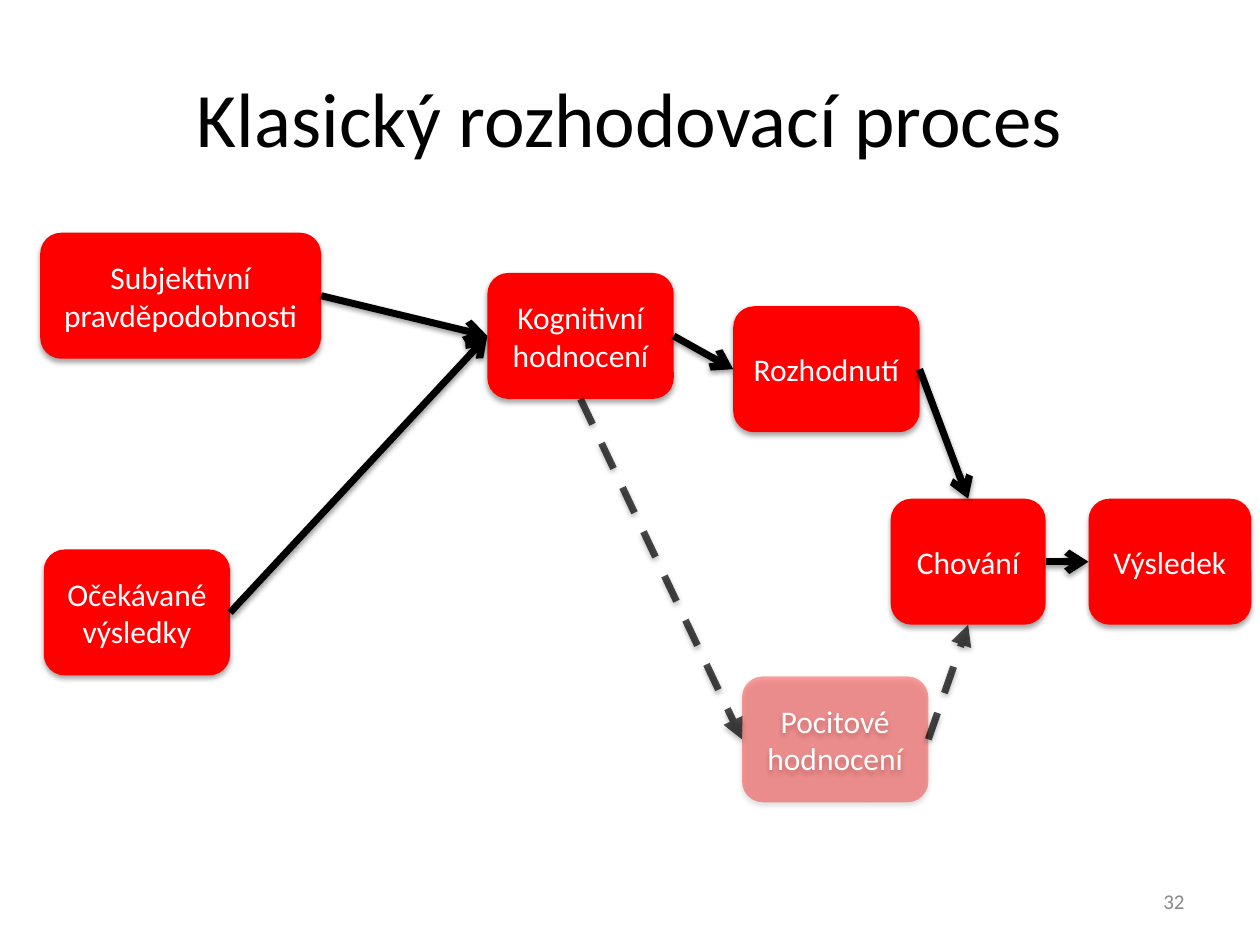
from lxml import etree
from pptx import Presentation
from pptx import util as u
from pptx.dml import color
from pptx.enum import dml, shapes, text
from pptx.oxml import ns


TOP, LEFT, BOTTOM, RIGHT = range(4)


def rgb(value):
    return color.RGBColor.from_string(value)


def add_node(parent, tag, **attributes):
    node = etree.SubElement(parent, ns.qn(tag))
    for name, value in attributes.items():
        node.set(name, str(value))
    return node


def set_alpha(fill_parent, percent):
    tone = fill_parent.find(ns.qn("a:solidFill"))[0]
    add_node(tone, "a:alpha", val=percent * 1000)


class Slide:
    font = "Calibri"
    black, white, red, grey = "000000", "FFFFFF", "FF0000", "898989"
    box_height = 72

    def __init__(self, deck):
        self.page = deck.slides.add_slide(deck.slide_layouts[6])

    def set_words(self, shape, words, size, tone, align):
        frame = shape.text_frame
        frame.word_wrap = True
        frame.vertical_anchor = text.MSO_ANCHOR.MIDDLE
        frame.text = words
        para = frame.paragraphs[0]
        para.alignment = align
        span = para.runs[0]
        span.font.name = self.font
        span.font.size = u.Pt(size)
        span.font.color.rgb = rgb(tone)

    def label(self, words, left, top, width, height, size, tone, align):
        box = self.page.shapes.add_textbox(*map(u.Pt, (left, top, width, height)))
        self.set_words(box, words, size, tone, align)

    def shade(self, properties, alpha, distance):
        effects = properties.find(ns.qn("a:effectLst"))
        if effects is None:
            effects = add_node(properties, "a:effectLst")
        shadow = add_node(effects, "a:outerShdw", blurRad=u.Pt(3.1), dist=u.Pt(distance),
                          dir=90 * 60000, rotWithShape=0)
        tone = add_node(shadow, "a:srgbClr", val=self.black)
        add_node(tone, "a:alpha", val=alpha * 1000)

    def step(self, words, left, top, width=106.5, opacity=100):
        box = self.page.shapes.add_shape(
            shapes.MSO_SHAPE.ROUNDED_RECTANGLE,
            *map(u.Pt, (left, top, width, self.box_height)))
        box.fill.solid()
        box.fill.fore_color.rgb = rgb(self.red)
        box.line.fill.background()
        box.shadow.inherit = False
        properties = box.element.spPr
        if opacity < 100:
            set_alpha(properties, opacity)
        self.shade(properties, 35, 1.8)
        self.set_words(box, words, 18, self.white, text.PP_ALIGN.CENTER)
        return box

    def arrow(self, start, start_side, end, end_side, dashed=False):
        link = self.page.shapes.add_connector(shapes.MSO_CONNECTOR.STRAIGHT, 0, 0, 0, 0)
        link.begin_connect(start, start_side)
        link.end_connect(end, end_side)
        link.line.width = u.Pt(4)
        link.line.color.rgb = rgb(self.black)
        properties = link.element.spPr
        stroke = properties.find(ns.qn("a:ln"))
        if dashed:
            link.line.dash_style = dml.MSO_LINE.DASH
            set_alpha(stroke, 69)
        add_node(stroke, "a:tailEnd", type="triangle" if dashed else "arrow")
        self.shade(properties, 38, 1.6)


deck = Presentation()
deck.slide_width, deck.slide_height = u.Pt(720), u.Pt(540)
slide = Slide(deck)

slide.label("Klasický rozhodovací proces", 36, 21.6, 648, 90, 44,
            slide.black, text.PP_ALIGN.CENTER)
slide.label("32", 516, 500.5, 168, 28.75, 12, slide.grey, text.PP_ALIGN.RIGHT)

decision = slide.step("Rozhodnutí", 419, 175)
result = slide.step("Výsledek", 622, 285, 93)
behaviour = slide.step("Chování", 509, 285, 88.5)
cognition = slide.step("Kognitivní hodnocení", 278.5, 156)
expectation = slide.step("Očekávané výsledky", 25, 314)
probability = slide.step("Subjektivní pravděpodobnosti", 23, 133, 160.5)

for start, end, end_side in (
    (probability, cognition, LEFT),
    (cognition, decision, LEFT),
    (decision, behaviour, TOP),
    (behaviour, result, LEFT),
    (expectation, cognition, LEFT),
):
    slide.arrow(start, RIGHT, end, end_side)

feeling = slide.step("Pocitové hodnocení", 424, 386.5, opacity=37)
slide.arrow(cognition, BOTTOM, feeling, LEFT, dashed=True)
slide.arrow(feeling, RIGHT, behaviour, BOTTOM, dashed=True)

deck.save("out.pptx")
